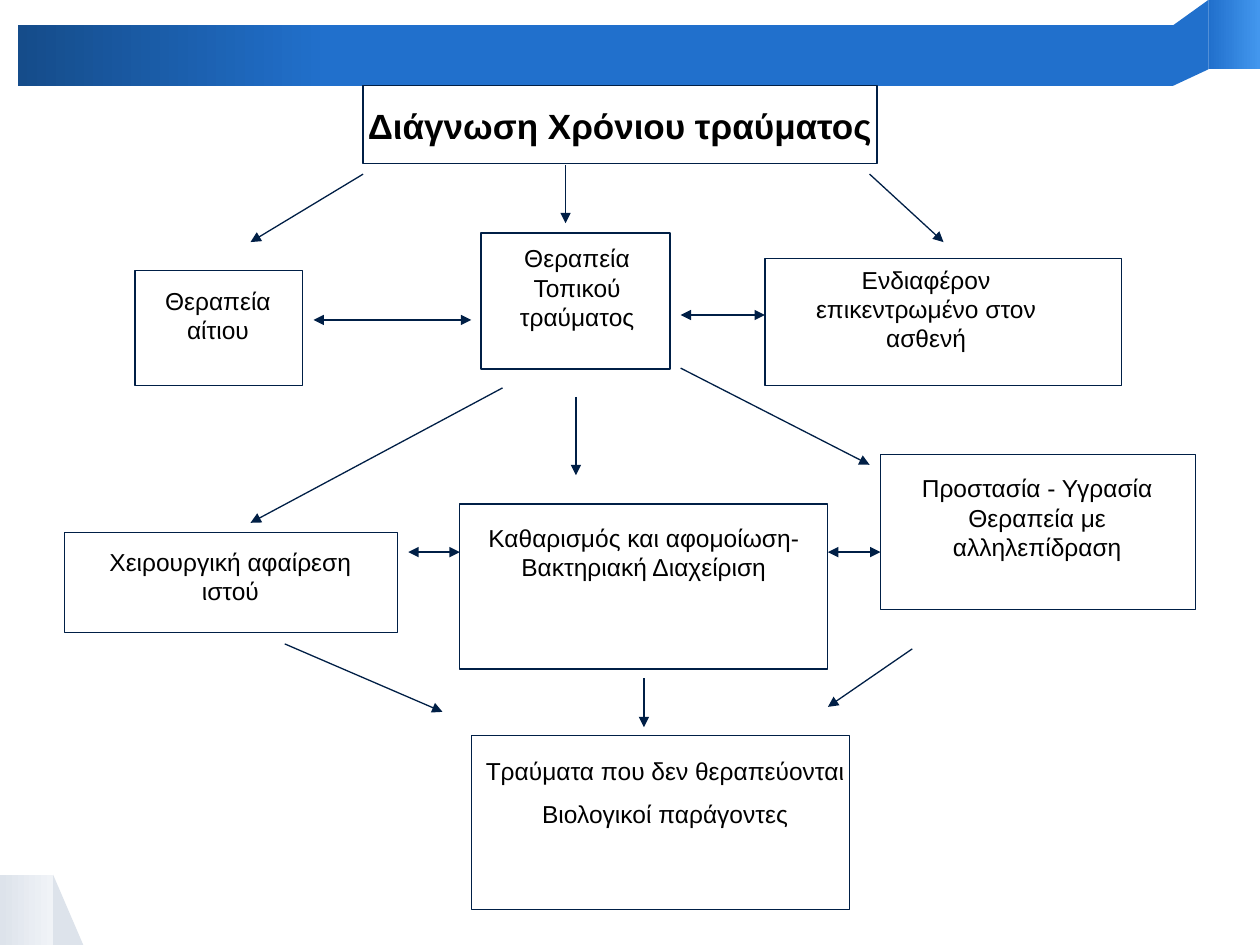
from lxml.etree import SubElement
from pptx import Presentation
from pptx.dml.color import RGBColor
from pptx.enum.shapes import MSO_CONNECTOR as Link, MSO_SHAPE as Form
from pptx.enum.text import MSO_ANCHOR as Anchor, MSO_AUTO_SIZE as Fit, PP_ALIGN as Align
from pptx.oxml.ns import qn
from pptx.util import Cm, Pt

FONT = "Arial"
BLACK = RGBColor(0, 0, 0)
NAVY = RGBColor(0x00, 0x1F, 0x46)
BLUE = RGBColor(0x21, 0x70, 0xCC)
DEEP = RGBColor(0x15, 0x4C, 0x8A)
SKY = RGBColor(0x43, 0x97, 0xEE)
GREY = RGBColor(0xDD, 0xE3, 0xEB)
PALE = RGBColor(0xF0, 0xF3, 0xF7)

TITLE = ("Διάγνωση Χρόνιου τραύματος", (7.16, 1.98, 12.5, 1.12), (7.32, 1.73, 10.36, 1.57))

# Text, then label and frame as left, top, width, height in cm
STEPS = [
    ("Θεραπεία αίτιου", (2.59, 5.64, 3.61, 1.8), (2.72, 5.46, 3.38, 2.31)),
    ("Θεραπεία Τοπικού τραύματος", (9.83, 4.78, 3.61, 2.57), (9.7, 4.7, 3.81, 2.74)),
    ("Ενδιαφέρον επικεντρωμένο στον ασθενή",
     (15.42, 5.21, 6.5, 2.57), (15.42, 5.21, 7.19, 2.57)),
    ("Χειρουργική αφαίρεση ιστού", (1.57, 10.9, 6.15, 1.8), (1.3, 10.74, 6.71, 2.01)),
    ("Καθαρισμός και αφομοίωση-Βακτηριακή Διαχείριση",
     (8.99, 10.41, 7.98, 2.57), (9.27, 10.16, 7.42, 3.33)),
    ("Προστασία - Υγρασία Θεραπεία με αλληλεπίδραση",
     (17.75, 9.42, 6.32, 3.71), (17.75, 9.17, 6.35, 3.12)),
    ("Τραύματα που δεν θεραπεύονται\nΒιολογικοί παράγοντες",
     (9.5, 15.11, 7.82, 2.95), (9.5, 14.83, 7.62, 3.51)),
]

# Start x, y and end x, y in cm
FLOWS = [
    (7.32, 3.51, 5.05, 4.88), (11.4, 3.33, 11.4, 4.5), (17.53, 3.51, 19.02, 4.88),
    (10.13, 7.82, 5.05, 10.54), (11.61, 8, 11.61, 9.58), (13.72, 7.42, 17.53, 9.37),
    (5.74, 12.98, 8.92, 14.35), (12.98, 13.67, 12.98, 14.66), (18.39, 13.08, 16.69, 14.25),
]
# Left x, right x, y in cm
PAIRS = [(6.32, 9.5, 6.45), (13.72, 15.42, 6.35), (8.23, 9.27, 11.13), (16.69, 17.75, 11.13)]


def cms(nums):
    return [Cm(num) for num in nums]


def paint(shape, start, end=None, stop=1):
    """Fill without outline: plain, or from start to end, reached at stop."""
    shape.shadow.inherit = False
    shape.line.fill.background()
    if end is None:
        shape.fill.solid()
        shape.fill.fore_color.rgb = start
        return
    shape.fill.gradient()
    shape.fill.gradient_angle = 0
    for mark, color, pos in zip(shape.fill.gradient_stops, (start, end), (0, stop)):
        mark.color.rgb = color
        mark.position = pos


def add_decor(shapes):
    paint(shapes.add_shape(Form.RIGHT_TRIANGLE, *cms((1.07, 17.63, 0.61, 1.42))), GREY)
    for box, *look in [
        ((0, 17.63, 1.07, 1.42), GREY, PALE),
        ((24.36, 0, 1.04, 1.4), BLUE, SKY),
        ((0.36, 0.51, 23.29, 1.22), DEEP, BLUE, 0.27),
    ]:
        paint(shapes.add_shape(Form.RECTANGLE, *cms(box)), *look)
    fold = shapes.build_freeform(Cm(24.36), Cm(0))
    fold.add_line_segments([cms(p) for p in ((23.65, 0.51), (23.65, 1.73), (24.36, 1.4))])
    paint(fold.convert_to_shape(), BLUE)


def add_frame(shapes, box):
    frame = shapes.add_shape(Form.RECTANGLE, *cms(box))
    frame.shadow.inherit = False
    frame.fill.background()
    frame.line.color.rgb = NAVY
    frame.line.width = Pt(0.75)


def set_text(frame, text, size, align, bold=False):
    frame.text = text
    frame.word_wrap = True
    frame.auto_size = Fit.NONE
    frame.vertical_anchor = Anchor.TOP
    for i, para in enumerate(frame.paragraphs):
        para.alignment = align
        para.space_before = Pt(8 if i else 0)
        font = para.font
        font.name, font.size, font.bold = FONT, Pt(size), bold
        font.color.rgb = BLACK


def set_title(slide):
    text, label, frame = TITLE
    title = slide.shapes.title
    title.left, title.top, title.width, title.height = cms(label)
    set_text(title.text_frame, text, 20, Align.LEFT, True)
    add_frame(slide.shapes, frame)


def add_step(shapes, text, label, frame):
    box = shapes.add_textbox(*cms(label))
    set_text(box.text_frame, text, 14, Align.CENTER)
    add_frame(shapes, frame)


def add_arrow(shapes, ends, both=False):
    arrow = shapes.add_connector(Link.STRAIGHT, *cms(ends))
    arrow.line.color.rgb = NAVY
    arrow.line.width = Pt(0.75)
    line = arrow.line._get_or_add_ln()
    for tag in ("a:headEnd", "a:tailEnd") if both else ("a:tailEnd",):
        SubElement(line, qn(tag), type="triangle")
    SubElement(arrow._element.spPr, qn("a:effectLst"))


def main():
    deck = Presentation()
    deck.slide_width, deck.slide_height = cms((25.4, 19.05))
    slide = deck.slides.add_slide(deck.slide_layouts[5])
    shapes = slide.shapes
    add_decor(shapes)
    set_title(slide)
    for step in STEPS:
        add_step(shapes, *step)
    for ends in FLOWS:
        add_arrow(shapes, ends)
    for left, right, y in PAIRS:
        add_arrow(shapes, (left, y, right, y), both=True)
    deck.save("out.pptx")


if __name__ == "__main__":
    main()
